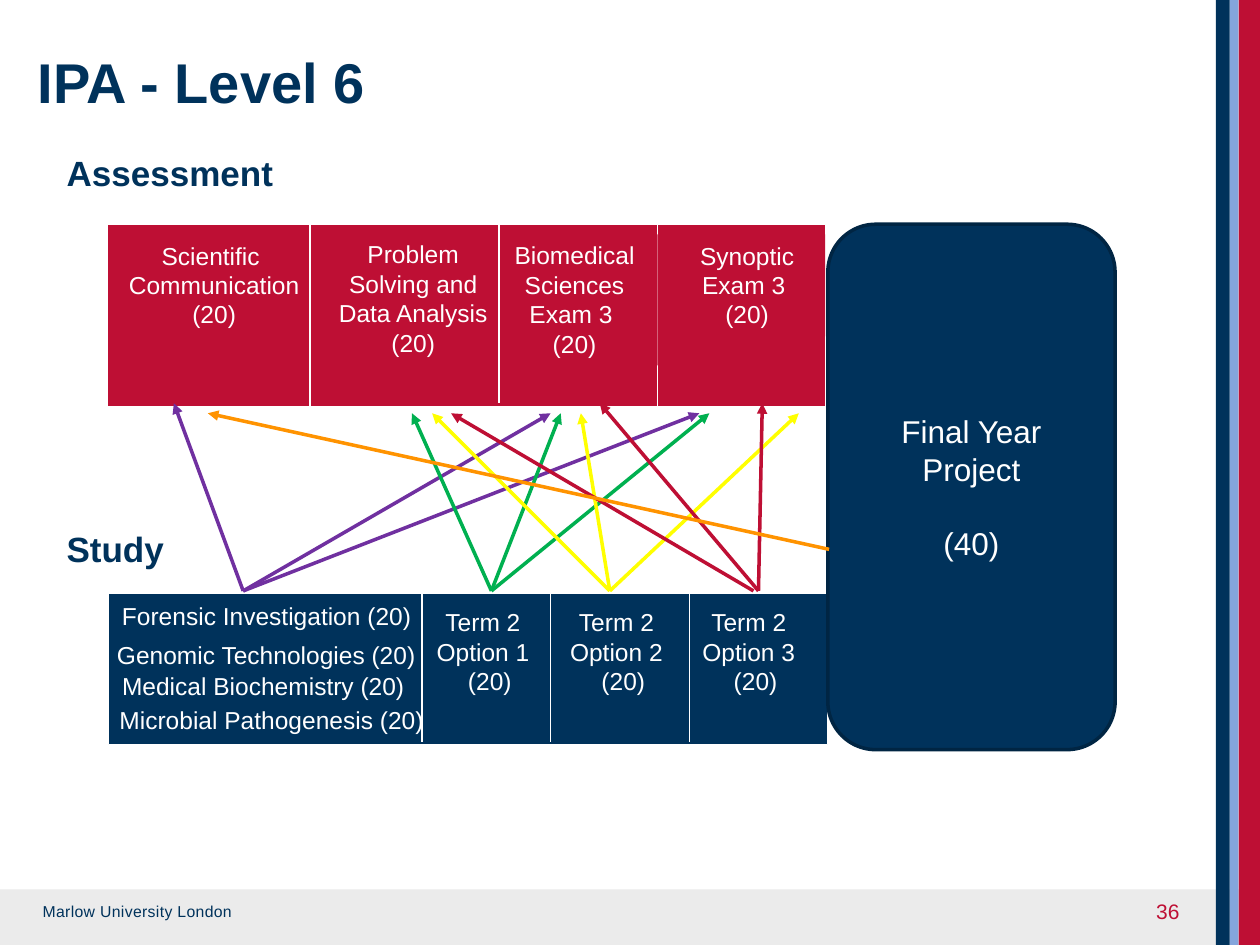
from dataclasses import dataclass
from typing import NamedTuple

import pptx
import pptx.dml.color
import pptx.enum.shapes
import pptx.enum.text
import pptx.oxml.xmlchemy
import pptx.util

Inches = pptx.util.Inches
Align = pptx.enum.text.PP_ALIGN
Anchor = pptx.enum.text.MSO_ANCHOR
Preset = pptx.enum.shapes.MSO_SHAPE
Straight = pptx.enum.shapes.MSO_CONNECTOR.STRAIGHT


@dataclass(frozen=True)
class Theme:
    """Colours, font and type sizes of the slide."""

    navy: str = "00325B"
    navy_edge: str = "002543"
    red: str = "BE0F34"
    sky: str = "84A5DC"
    grey: str = "EBEBEB"
    white: str = "FFFFFF"
    purple: str = "7030A0"
    green: str = "00B050"
    yellow: str = "FFFF00"
    orange: str = "FF9300"
    font: str = "Arial"
    title: float = 32
    heading: float = 20
    project: float = 18
    label: float = 14
    number: float = 12
    footer: float = 9
    hairline: float = 0.75
    stroke: float = 2


class Area(NamedTuple):
    """Left, top, width and height in inches."""

    left: float
    top: float
    width: float
    height: float


class Point(NamedTuple):
    """Position in inches."""

    x: float
    y: float


@dataclass(frozen=True)
class Style:
    """Type style of a text block."""

    size: float
    color: str
    bold: bool = False
    align: Align = Align.LEFT


@dataclass(frozen=True)
class Label:
    """Text lines and the area they fill."""

    area: Area
    lines: tuple[str, ...]


@dataclass(frozen=True)
class Links:
    """Arrows of one colour, given as pairs of start and end."""

    color: str
    pairs: tuple[tuple[Point, Point], ...]


THEME = Theme()
CENTRED = Style(THEME.label, THEME.white, align=Align.CENTER)
LISTED = Style(THEME.label, THEME.white)
HEADING = Style(THEME.heading, THEME.navy, bold=True)
STUDY_TOP, ARROW_END, ARROW_TOUCH = 4.69, 3.28, 3.2

BARS = (
    (Area(0, 7.06, 10, 0.44), THEME.grey),
    (Area(9.83, 0, 0.17, 7.5), THEME.red),
    (Area(9.76, 0, 0.07, 7.5), THEME.sky),
    (Area(9.65, 0, 0.11, 7.5), THEME.navy),
)
OPTIONS = (Area(3.27, 4.77, 1.18, 0.81), Area(4.37, 4.77, 1.1, 1.08), Area(5.24, 4.77, 1.46, 0.81))
MODULES = (
    Label(Area(0.87, 4.72, 2.76, 0.34), ("Forensic Investigation (20)",)),
    Label(Area(0.83, 5.03, 2.68, 0.34), ("Genomic Technologies (20)",)),
    Label(Area(0.87, 5.28, 2.49, 0.34), ("Medical Biochemistry (20)",)),
    Label(Area(0.85, 5.55, 2.63, 0.34), ("Microbial Pathogenesis (20)",)),
)
ASSESSMENTS = (
    Label(Area(0.87, 1.86, 1.66, 0.81), ("Scientific ", "Communication", "(20)")),
    Label(Area(3.9, 1.86, 1.32, 1.04), ("Biomedical Sciences Exam 3 ", "(20)")),
    Label(Area(2.53, 1.85, 1.5, 1.04), ("Problem Solving and Data Analysis (20)",)),
    Label(Area(5.31, 1.86, 1.24, 0.81), ("Synoptic Exam 3 ", "(20)")),
)
HEADINGS = (
    Label(Area(0.43, 1.15, 1.85, 0.44), ("Assessment",)),
    Label(Area(0.43, 4.14, 0.99, 0.44), ("Study",)),
)


def fan(color: str, start: float, *ends: tuple[float, float]) -> Links:
    """Return arrows spreading from one point on the study row."""
    return Links(color, tuple((Point(start, STUDY_TOP), Point(*end)) for end in ends))


LINKS = (
    fan(THEME.purple, 1.93, (1.38, ARROW_TOUCH), (4.37, ARROW_END), (5.55, ARROW_END)),
    fan(THEME.green, 3.9, (3.27, ARROW_END), (4.45, ARROW_END), (5.63, ARROW_END)),
    fan(THEME.yellow, 4.84, (4.61, ARROW_END), (6.34, ARROW_END), (3.43, ARROW_END)),
    fan(THEME.red, 6.02, (6.05, ARROW_TOUCH), (4.76, ARROW_TOUCH)),
    fan(THEME.red, 5.98, (3.58, ARROW_END)),
    Links(THEME.orange, ((Point(6.58, 4.36), Point(1.65, ARROW_END)),)),
)


def rgb(color: str) -> pptx.dml.color.RGBColor:
    """Return a colour from its hexadecimal name."""
    return pptx.dml.color.RGBColor.from_string(color)


def write(shape, lines: tuple[str, ...], style: Style, anchor=Anchor.TOP, wrap: bool = True) -> None:
    """Fill a shape with styled paragraphs."""
    frame = shape.text_frame
    frame.text = "\n".join(lines)
    frame.word_wrap = wrap
    frame.vertical_anchor = anchor
    for para in frame.paragraphs:
        para.alignment = style.align
        para.font.name = THEME.font
        para.font.size = pptx.util.Pt(style.size)
        para.font.bold = style.bold
        para.font.color.rgb = rgb(style.color)


def add_text(page, label: Label, style: Style, anchor=Anchor.TOP, wrap: bool = True):
    """Add a text box."""
    box = page.shapes.add_textbox(*map(Inches, label.area))
    write(box, label.lines, style, anchor, wrap)
    return box


def add_block(page, area: Area, fill: str, edge: str = "", width: float = THEME.hairline, preset=Preset.RECTANGLE):
    """Add a filled shape, outlined when an edge colour is given."""
    block = page.shapes.add_shape(preset, *map(Inches, area))
    block.shadow.inherit = False
    block.fill.solid()
    block.fill.fore_color.rgb = rgb(fill)
    if edge:
        block.line.color.rgb = rgb(edge)
        block.line.width = pptx.util.Pt(width)
    else:
        block.line.fill.background()
    return block


def add_line(page, start: Point, end: Point, color: str, width: float, arrow: bool = False) -> None:
    """Add a straight line, with an arrowhead at its end if asked."""
    line = page.shapes.add_connector(Straight, *map(Inches, (*start, *end)))
    line.line.color.rgb = rgb(color)
    line.line.width = pptx.util.Pt(width)
    if arrow:
        head = pptx.oxml.xmlchemy.OxmlElement("a:tailEnd")
        head.set("type", "triangle")
        line.line._get_or_add_ln().append(head)
    line._element.spPr.append(pptx.oxml.xmlchemy.OxmlElement("a:effectLst"))


def add_divider(page, x: float, top: float, bottom: float) -> None:
    """Add a thin white vertical rule."""
    add_line(page, Point(x, top), Point(x, bottom), THEME.white, THEME.hairline)


def add_frame(page) -> None:
    """Add the bars, title, footer and page number."""
    for area, color in BARS:
        add_block(page, area, color)
    title = page.shapes.title
    title.left, title.top, title.width, title.height = map(Inches, (0.2, 0.29, 9.1, 0.87))
    write(title, ("IPA - Level 6",), Style(THEME.title, THEME.navy, bold=True))
    title.text_frame.margin_top = Inches(0.09)
    footer = Label(Area(0.24, 7.11, 1.77, 0.25), ("Marlow University London",))
    box = add_text(page, footer, Style(THEME.footer, THEME.navy))
    for span in box.text_frame.paragraphs[0].runs:
        span._r.get_or_add_rPr().set("spc", "20")
    number = Label(Area(7.13, 7.03, 2.33, 0.4), ("36",))
    add_text(page, number, Style(THEME.number, THEME.red, align=Align.RIGHT), Anchor.MIDDLE)


def add_study(page) -> None:
    """Add the row of study blocks."""
    add_block(page, Area(0.86, 4.71, 5.71, 1.2), THEME.navy, THEME.white)
    for index, area in enumerate(OPTIONS, start=1):
        add_text(page, Label(area, ("Term 2 ", f"Option {index} ", " (20)")), CENTRED)
    for module in MODULES:
        add_text(page, module, LISTED)
    for x in (3.35, 4.37, 5.47):
        add_divider(page, x, STUDY_TOP, 5.89)


def add_assessment(page) -> None:
    """Add the row of assessment blocks."""
    add_block(page, Area(0.85, 1.78, 5.7, 1.45), THEME.red, THEME.white)
    add_divider(page, 5.22, 1.78, 3.23)
    for label in ASSESSMENTS:
        write(add_block(page, label.area, THEME.red), label.lines, CENTRED)
    for x, bottom in ((3.96, 3.2), (2.46, 3.23)):
        add_divider(page, x, 1.78, bottom)


def add_project(page) -> None:
    """Add the final project block."""
    area = Area(6.57, 1.78, 2.28, 4.17)
    block = add_block(page, area, THEME.navy, THEME.navy_edge, THEME.stroke, Preset.ROUNDED_RECTANGLE)
    style = Style(THEME.project, THEME.white, align=Align.CENTER)
    write(block, ("Final Year Project", "(40)"), style, Anchor.MIDDLE)
    block.text_frame.paragraphs[1].space_before = pptx.util.Pt(21)


def main() -> None:
    """Build and save the slide."""
    deck = pptx.Presentation()
    deck.slide_width, deck.slide_height = Inches(10), Inches(7.5)
    page = deck.slides.add_slide(deck.slide_layouts[5])
    add_frame(page)
    add_study(page)
    add_assessment(page)
    add_project(page)
    for heading in HEADINGS:
        add_text(page, heading, HEADING, wrap=False)
    for links in LINKS:
        for start, end in links.pairs:
            add_line(page, start, end, links.color, THEME.stroke, arrow=True)
    deck.save("out.pptx")


if __name__ == "__main__":
    main()
